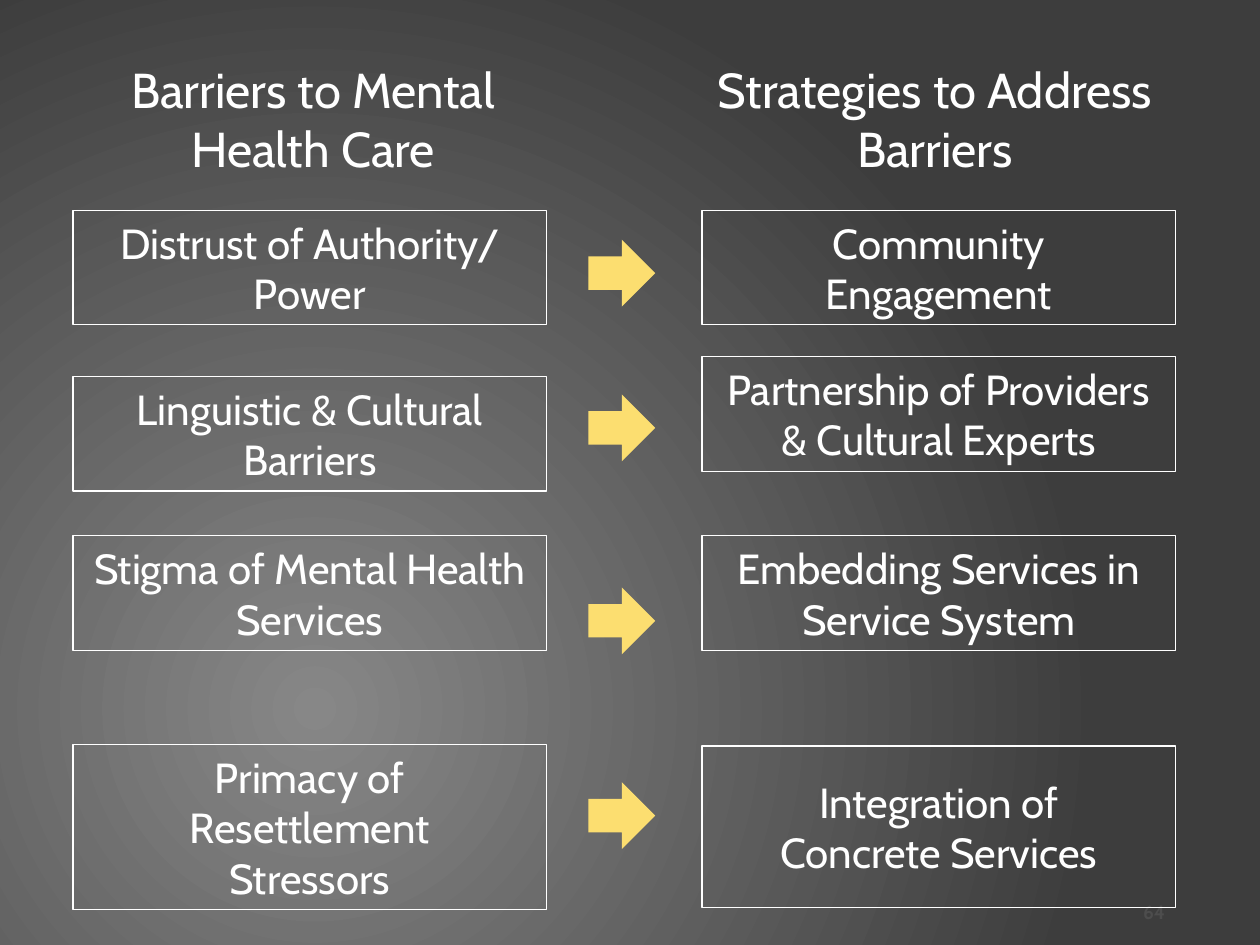
import pptx
import pptx.util
import pptx.dml.color
import pptx.enum.shapes
import pptx.enum.text
import pptx.oxml
import pptx.oxml.ns

Cm = pptx.util.Cm
ALIGN = pptx.enum.text.PP_ALIGN
ANCHOR = pptx.enum.text.MSO_ANCHOR
AUTO_SIZE = pptx.enum.text.MSO_AUTO_SIZE
SHAPE = pptx.enum.shapes.MSO_SHAPE

COLORS = {
    "glow": "878787",
    "edge": "3D3D3D",
    "text": "FFFFFF",
    "arrow": "FCDE70",
    "number": "4D4D4D",
}

BARRIER_LEFT, STRATEGY_LEFT, BOX_WIDTH = 1.47, 14.15, 9.55
ARROW_LEFT, ARROW_SIZE = 11.86, 1.35

# Each box is (top, height, lines); each row is (barrier, arrow top, strategy).
ROWS = [
    ((4.24, 2.31, ["Distrust of Authority/", "Power"]), 4.83,
     (4.24, 2.31, ["Community", "Engagement"])),
    ((7.59, 2.31, ["Linguistic & Cultural", "Barriers"]), 7.95,
     (7.19, 2.31, ["Partnership of Providers & Cultural Experts"])),
    ((10.8, 2.31, ["Stigma of Mental Health", "Services"]), 11.84,
     (10.8, 2.31, ["Embedding Services in", "Service System"])),
    ((15.01, 3.33, ["Primacy of", "Resettlement", "Stressors"]), 15.77,
     (15.04, 3.25, ["Integration of", "Concrete Services"])),
]


def rgb(name):
    return pptx.dml.color.RGBColor.from_string(COLORS[name])


def set_values(target, values):
    for name, value in values.items():
        setattr(target, name, value)


class SlideBuilder:
    font_name = "Cabin"

    def __init__(self, slide):
        self.slide = slide

    def background(self):
        """Radial gradient centred in the lower left quarter of the slide."""
        fill = self.slide.background.fill
        fill.gradient()
        for stop, name in zip(fill.gradient_stops, ("glow", "edge")):
            stop.color.rgb = rgb(name)
        linear = self.slide.element.find(".//" + pptx.oxml.ns.qn("a:lin"))
        radial = pptx.oxml.parse_xml(
            f'<a:path {pptx.oxml.ns.nsdecls("a")} path="circle">'
            '<a:fillToRect l="50000" t="100000" r="100000" b="50000"/></a:path>')
        linear.getparent().replace(linear, radial)

    def fill_text(self, shape, lines, size, color="text", align=ALIGN.CENTER,
                  bold=False, **frame_values):
        frame = shape.text_frame
        set_values(frame, {"word_wrap": True, **frame_values})
        frame.text = "\n".join(lines)
        for paragraph in frame.paragraphs:
            paragraph.alignment = align
            set_values(paragraph.font, {"name": self.font_name, "bold": bold,
                                        "size": pptx.util.Pt(size)})
            paragraph.font.color.rgb = rgb(color)

    def text(self, left, top, width, height, lines, size, **style):
        shape = self.slide.shapes.add_textbox(*map(Cm, (left, top, width, height)))
        self.fill_text(shape, lines, size, **style)

    def shape(self, kind, left, top, width, height):
        shape = self.slide.shapes.add_shape(kind, *map(Cm, (left, top, width, height)))
        shape.shadow.inherit = False
        return shape

    def box(self, left, top, height, lines):
        shape = self.shape(SHAPE.RECTANGLE, left, top, BOX_WIDTH, height)
        shape.fill.background()
        shape.line.color.rgb = rgb("text")
        shape.line.width = pptx.util.Pt(0.75)
        self.fill_text(shape, lines, 24, vertical_anchor=ANCHOR.MIDDLE)

    def arrow(self, top):
        shape = self.shape(SHAPE.RIGHT_ARROW, ARROW_LEFT, top, ARROW_SIZE, ARROW_SIZE)
        shape.fill.solid()
        shape.fill.fore_color.rgb = rgb("arrow")
        shape.line.fill.background()


def main():
    presentation = pptx.Presentation()
    presentation.slide_width, presentation.slide_height = Cm(25.4), Cm(19.05)
    builder = SlideBuilder(presentation.slides.add_slide(presentation.slide_layouts[6]))
    builder.background()
    builder.text(18.21, 17.35, 5.28, 1.27, ["64"], 11, color="number",
                 align=ALIGN.RIGHT, bold=True, vertical_anchor=ANCHOR.BOTTOM,
                 margin_left=0, margin_right=0, margin_bottom=0)

    heading_style = {"word_wrap": False, "auto_size": AUTO_SIZE.SHAPE_TO_FIT_TEXT}
    builder.text(2.21, 1.07, 8.2, 2.64, ["Barriers to Mental", "Health Care"], 28,
                 **heading_style)
    builder.text(14.17, 1.07, 9.35, 2.64, ["Strategies to Address", "Barriers"], 28,
                 **heading_style)

    for barrier, arrow_top, strategy in ROWS:
        builder.box(BARRIER_LEFT, *barrier)
        builder.box(STRATEGY_LEFT, *strategy)
        builder.arrow(arrow_top)

    presentation.save("out.pptx")


if __name__ == "__main__":
    main()
